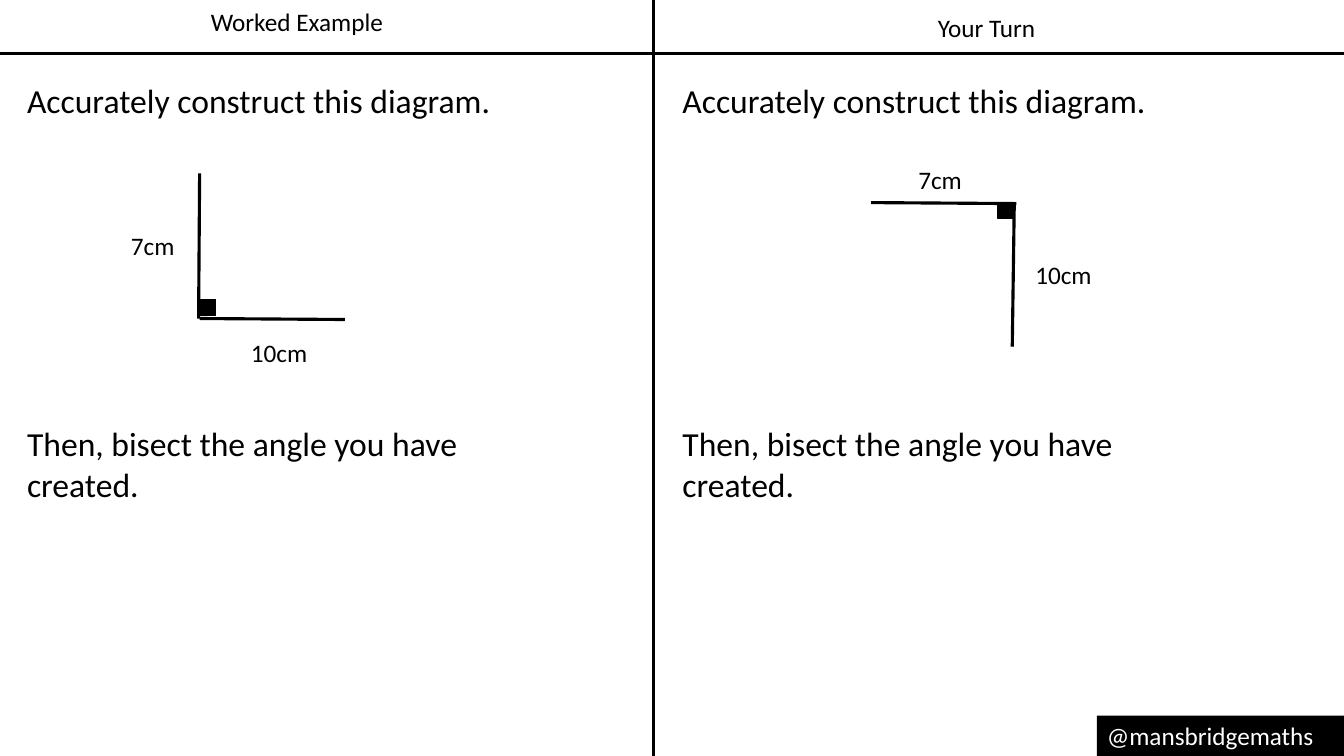
from dataclasses import dataclass

from lxml.etree import SubElement
from pptx import Presentation
from pptx.dml.color import RGBColor
from pptx.enum.shapes import MSO_CONNECTOR, MSO_SHAPE
from pptx.enum.text import MSO_ANCHOR, PP_ALIGN
from pptx.oxml.ns import qn
from pptx.util import Inches, Pt


@dataclass(frozen=True)
class Theme:
    font: str = "Calibri"
    ink: RGBColor = RGBColor(0, 0, 0)
    paper: RGBColor = RGBColor(255, 255, 255)
    label_size: float = 18
    task_size: float = 24
    divider_width: float = 2.5
    arm_width: float = 2.25
    corner_width: float = 1


THEME = Theme()
WIDTH, HEIGHT = 13.33, 7.5
COLUMN_LEFTS = (0.17, 6.67)
TASK_WIDTH = 5.56
HEADING_WIDTH, LABEL_WIDTH, LABEL_HEIGHT = 1.93, 1.03, 0.4
CORNER_SIDE = 0.16
DIVIDERS = [((6.48, 0), (6.48, HEIGHT)), ((0, 0.53), (WIDTH, 0.53))]

TASKS = [
    ("Accurately construct this diagram.", 0.74, 0.5),
    ("Then, bisect the angle you have created.", 4.15, 0.91),
]
HANDLE = "@mansbridgemaths"
HANDLE_BOX = (10.88, HEIGHT - LABEL_HEIGHT, 2.46, LABEL_HEIGHT)

PANELS = [
    {
        "heading": ("Worked Example", 1.98, 0.01),
        "arms": [((1.98, 1.72), (1.97, 3.16)), ((1.98, 3.16), (3.42, 3.17))],
        "lengths": [("10cm", 2.39, 3.3), ("7cm", 1.2, 2.24)],
        "corner": (1.98, 2.97),
    },
    {
        "heading": ("Your Turn", 8.82, 0.07),
        "arms": [((10.06, 2.01), (10.04, 3.44)), ((8.64, 2.01), (10.08, 2.02))],
        "lengths": [("10cm", 10.17, 2.52), ("7cm", 9.01, 1.58)],
        "corner": (9.9, 2.01),
    },
]


def write(frame, words, size, color=THEME.ink, align=PP_ALIGN.LEFT):
    frame.word_wrap = True
    frame.vertical_anchor = MSO_ANCHOR.TOP
    paragraph = frame.paragraphs[0]
    paragraph.alignment = align
    run = paragraph.add_run()
    run.text = words
    run.font.name = THEME.font
    run.font.size = Pt(size)
    run.font.color.rgb = color


def add_words(slide, words, box, size, align=PP_ALIGN.LEFT):
    holder = slide.shapes.add_textbox(*map(Inches, box))
    write(holder.text_frame, words, size, align=align)


def add_segment(slide, start, end, width):
    segment = slide.shapes.add_connector(
        MSO_CONNECTOR.STRAIGHT, *map(Inches, (*start, *end))
    )
    segment.line.color.rgb = THEME.ink
    segment.line.width = Pt(width)
    SubElement(segment._element.spPr, qn("a:effectLst"))


def add_block(slide, box):
    block = slide.shapes.add_shape(MSO_SHAPE.RECTANGLE, *map(Inches, box))
    block.shadow.inherit = False
    block.fill.solid()
    block.fill.fore_color.rgb = THEME.ink
    return block


def add_panel(slide, panel, column_left):
    heading, left, top = panel["heading"]
    add_words(slide, heading, (left, top, HEADING_WIDTH, LABEL_HEIGHT),
              THEME.label_size, PP_ALIGN.CENTER)
    for task, top, height in TASKS:
        add_words(slide, task, (column_left, top, TASK_WIDTH, height), THEME.task_size)
    for start, end in panel["arms"]:
        add_segment(slide, start, end, THEME.arm_width)
    for length, left, top in panel["lengths"]:
        add_words(slide, length, (left, top, LABEL_WIDTH, LABEL_HEIGHT), THEME.label_size)
    corner = add_block(slide, (*panel["corner"], CORNER_SIDE, CORNER_SIDE))
    corner.line.color.rgb = THEME.ink
    corner.line.width = Pt(THEME.corner_width)


def main():
    deck = Presentation()
    deck.slide_width, deck.slide_height = Inches(WIDTH), Inches(HEIGHT)
    slide = deck.slides.add_slide(deck.slide_layouts[6])
    for start, end in DIVIDERS:
        add_segment(slide, start, end, THEME.divider_width)
    handle = add_block(slide, HANDLE_BOX)
    handle.line.fill.background()
    write(handle.text_frame, HANDLE, THEME.label_size, THEME.paper)
    for panel, column_left in zip(PANELS, COLUMN_LEFTS):
        add_panel(slide, panel, column_left)
    deck.save("out.pptx")


if __name__ == "__main__":
    main()
